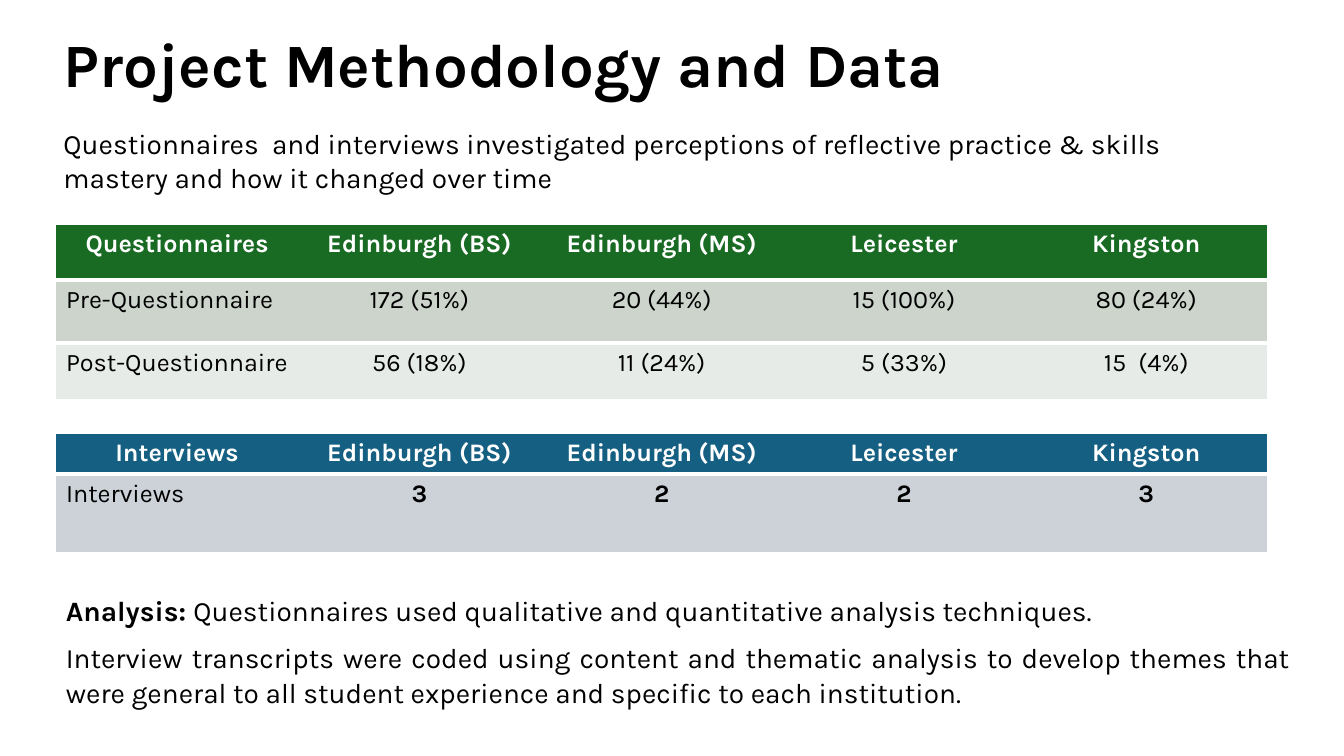
from dataclasses import dataclass

from lxml.etree import SubElement
from pptx import Presentation
from pptx.dml.color import RGBColor
from pptx.enum.text import MSO_ANCHOR, MSO_AUTO_SIZE, PP_ALIGN
from pptx.oxml.ns import qn
from pptx.util import Cm, Pt

PLAIN_TABLE_STYLE = "{2D5ABB26-0587-4C30-8999-92F81FD0307C}"


@dataclass(frozen=True)
class Theme:
    font: str = "Karla"
    title_size: int = 44
    body_size: int = 20
    table_size: int = 18
    text: str = "000000"
    white: str = "FFFFFF"
    green: str = "196B24"
    green_bands: tuple = ("CCD4CC", "E7EBE8")
    blue: str = "156082"
    blue_bands: tuple = ("CCD2D8",)


class SlideBuilder:
    def __init__(self, page, theme):
        self.page = page
        self.theme = theme

    def style(self, paragraph, size, color=None, bold=None, align=PP_ALIGN.LEFT):
        paragraph.alignment = align
        font = paragraph.font
        font.name = self.theme.font
        font.size = Pt(size)
        font.bold = bold
        font.color.rgb = RGBColor.from_string(color or self.theme.text)

    def title(self, text, left, top, width, height):
        title = self.page.shapes.title
        title.left, title.top = Cm(left), Cm(top)
        title.width, title.height = Cm(width), Cm(height)
        frame = title.text_frame
        frame.text = text
        frame.auto_size = MSO_AUTO_SIZE.NONE
        frame.vertical_anchor = MSO_ANCHOR.MIDDLE
        paragraph = frame.paragraphs[0]
        paragraph.line_spacing = 0.9
        self.style(paragraph, self.theme.title_size, bold=True)

    def text(self, paragraphs, left, top, width, height,
             align=PP_ALIGN.LEFT, line_spacing=None, space_after=0):
        """Each paragraph is a list of (text, bold) spans."""
        box = self.page.shapes.add_textbox(Cm(left), Cm(top), Cm(width), Cm(height))
        frame = box.text_frame
        frame.word_wrap = True
        frame.auto_size = MSO_AUTO_SIZE.SHAPE_TO_FIT_TEXT
        for index, spans in enumerate(paragraphs):
            paragraph = frame.add_paragraph() if index else frame.paragraphs[0]
            self.style(paragraph, self.theme.body_size, align=align)
            paragraph.line_spacing = line_spacing
            paragraph.space_after = Pt(space_after)
            for text, bold in spans:
                span = paragraph.add_run()
                span.text = text
                span.font.bold = bold

    def border(self, cell, side, points):
        line = SubElement(cell._tc.get_or_add_tcPr(), qn(f"a:ln{side}"), w=str(Pt(points)))
        fill = SubElement(line, qn("a:solidFill"))
        SubElement(fill, qn("a:srgbClr"), val=self.theme.white)

    def table(self, rows, left, top, width, heights, header_fill, bands, bold_values=False):
        frame = self.page.shapes.add_table(
            len(rows), len(rows[0]), Cm(left), Cm(top), Cm(width), Cm(sum(heights)))
        table = frame.table
        table._tbl.tblPr.find(qn("a:tableStyleId")).text = PLAIN_TABLE_STYLE
        table.horz_banding = False
        for row, height in zip(table.rows, heights):
            row.height = Cm(height)
        for r, values in enumerate(rows):
            header = r == 0
            for c, value in enumerate(values):
                cell = table.cell(r, c)
                cell.text = value
                if header:
                    self.border(cell, "T", 1)
                    self.border(cell, "B", 3)
                elif r == 1:
                    self.border(cell, "T", 3)
                cell.fill.solid()
                cell.fill.fore_color.rgb = RGBColor.from_string(
                    header_fill if header else bands[(r - 1) % len(bands)])
                self.style(
                    cell.text_frame.paragraphs[0], self.theme.table_size,
                    color=self.theme.white if header else self.theme.text,
                    bold=header or (bold_values and c > 0),
                    align=PP_ALIGN.CENTER if header or c else PP_ALIGN.LEFT)


def main():
    deck = Presentation()
    deck.slide_width, deck.slide_height = Cm(33.87), Cm(19.05)
    page = deck.slides.add_slide(deck.slide_layouts[5])
    theme = Theme()
    builder = SlideBuilder(page, theme)

    # Heading and introduction
    builder.title("Project Methodology and Data", 1.35, -0.15, 29.21, 3.68)
    builder.text(
        [[("Questionnaires  and interviews investigated perceptions of reflective "
           "practice & skills mastery and how it changed over time", False)]],
        1.35, 3.07, 29.85, 1.96)

    # Response tables
    sites = ["Edinburgh (BS)", "Edinburgh (MS)", "Leicester", "Kingston"]
    table_left, table_width = 1.41, 30.53
    builder.table(
        [["Questionnaires", *sites],
         ["Pre-Questionnaire", "172 (51%)", "20 (44%)", "15 (100%)", "80 (24%)"],
         ["Post-Questionnaire", "56 (18%)", "11 (24%)", "5 (33%)", "15  (4%)"]],
        table_left, 5.65, table_width, [1.41, 1.58, 1.41], theme.green, theme.green_bands)
    builder.table(
        [["Interviews", *sites], ["Interviews", "3", "2", "2", "3"]],
        table_left, 10.93, table_width, [1.02, 1.95], theme.blue, theme.blue_bands,
        bold_values=True)

    # Analysis
    builder.text(
        [[("Analysis: ", True),
          ("Questionnaires used qualitative and quantitative analysis techniques.", False)],
         [("Interview transcripts were coded using content and thematic analysis to "
           "develop themes that were general to all student experience and specific "
           "to each institution.", False)]],
        1.41, 14.78, 31.37, 3.23, align=PP_ALIGN.JUSTIFY, line_spacing=1.06, space_after=8)

    deck.save("out.pptx")


if __name__ == "__main__":
    main()
